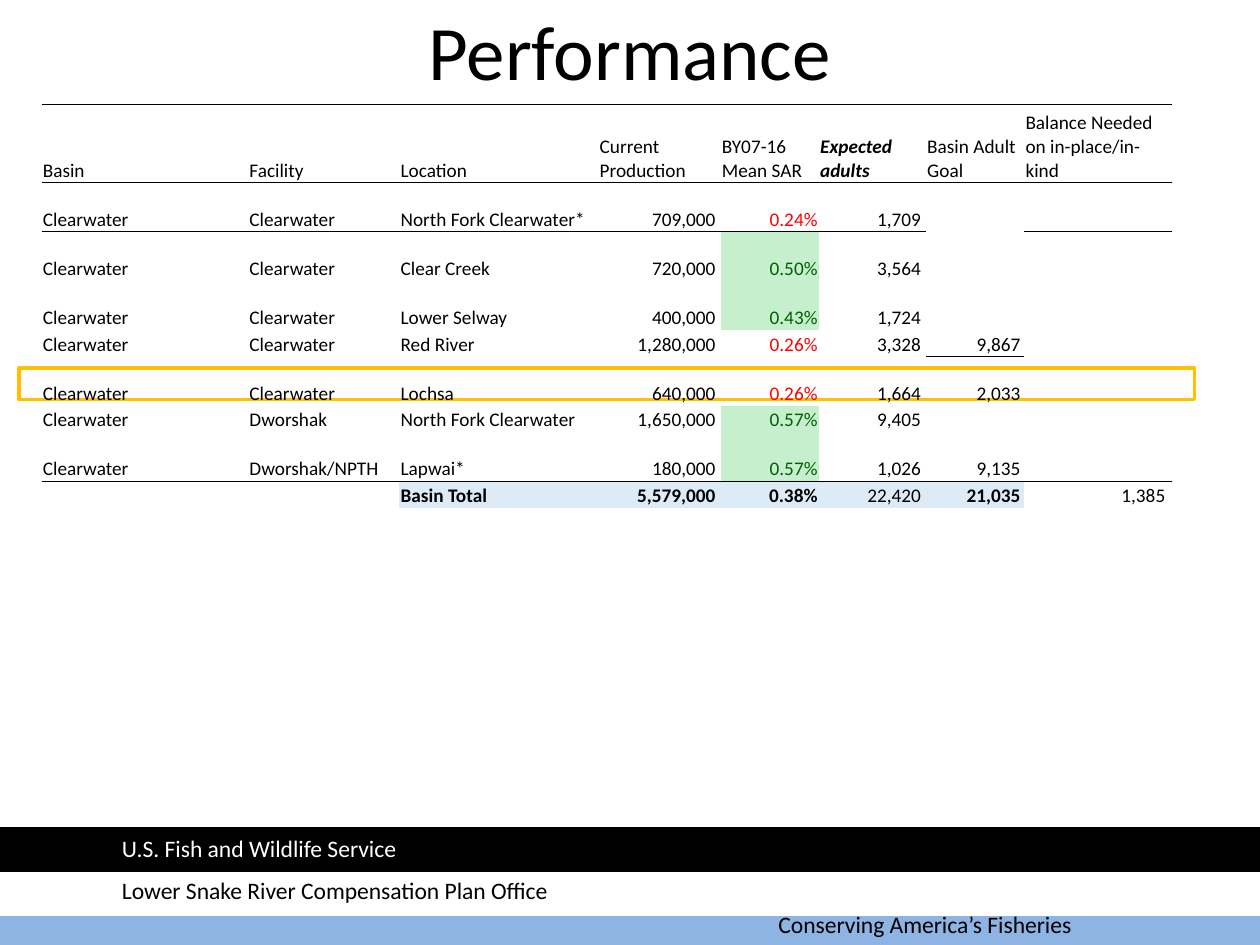
from dataclasses import dataclass
from typing import NamedTuple

from lxml.etree import SubElement
from pptx import Presentation
from pptx.dml.color import RGBColor
from pptx.enum.shapes import MSO_SHAPE as Shape
from pptx.enum.text import MSO_ANCHOR as Anchor, PP_ALIGN as Align
from pptx.oxml.ns import qn
from pptx.util import Inches, Pt


@dataclass(frozen=True)
class Theme:
    font: str = "Calibri"
    title_size: float = 44
    footer_size: float = 13.5
    table_size: float = 11
    black: str = "000000"
    white: str = "FFFFFF"
    blue: str = "8EB4E3"
    gold: str = "FFC000"
    low: str = "FF0000"
    high: str = "006100"
    high_fill: str = "C6EFCE"
    total_fill: str = "DDEBF7"


class Box(NamedTuple):
    left: float
    top: float
    width: float
    height: float


class Column(NamedTuple):
    heading: str
    width: float
    align: Align = Align.LEFT
    right_inset: float = 0.01


class Release(NamedTuple):
    facility: str
    location: str
    production: str
    survival: str
    meets_target: bool
    adults: str
    goal: str
    height: float


class Footer(NamedTuple):
    text: str
    place: Box
    color: str


THEME = Theme()
TALL, SHORT, HEADER = 0.39, 0.21, 0.62
NO_STYLE = "{2D5ABB26-0587-4C30-8999-92F81FD0307C}"
SURVIVAL = 4

COLUMNS = [
    Column("Basin", 1.64),
    Column("Facility", 1.2),
    Column("Location", 1.58),
    Column("Current Production", 0.97, Align.RIGHT, 0.04),
    Column("BY07-16 Mean SAR", 0.78, Align.RIGHT),
    Column("Expected adults", 0.85, Align.RIGHT, 0.04),
    Column("Basin Adult Goal", 0.78, Align.RIGHT, 0.03),
    Column("Balance Needed on in-place/in-kind", 1.17, Align.RIGHT, 0.05),
]
ADULTS, GOAL = 5, 6

RELEASES = [
    Release("Clearwater", "North Fork Clearwater*", "709,000", "0.24%", False, "1,709", "9,867", TALL),
    Release("Clearwater", "Clear Creek", "720,000", "0.50%", True, "3,564", "", TALL),
    Release("Clearwater", "Lower Selway", "400,000", "0.43%", True, "1,724", "", TALL),
    Release("Clearwater", "Red River", "1,280,000", "0.26%", False, "3,328", "", SHORT),
    Release("Clearwater", "Lochsa", "640,000", "0.26%", False, "1,664", "2,033", TALL),
    Release("Dworshak", "North Fork Clearwater", "1,650,000", "0.57%", True, "9,405", "9,135", SHORT),
    Release("Dworshak/NPTH", "Lapwai*", "180,000", "0.57%", True, "1,026", "", TALL),
]
TOTALS = ["", "", "Basin Total", "5,579,000", "0.38%", "22,420", "21,035", "1,385"]
GOAL_SPANS = [(1, 4), (6, 7)]  # first and last row sharing one adult goal

BANDS = [
    (Box(-0.01, 7.17, 10, 0.33), THEME.blue),
    (Box(0, 6.93, 10, 0.33), THEME.white),
    (Box(0, 6.58, 10, 0.33), THEME.black),
]
FOOTERS = [
    Footer("Conserving America’s Fisheries", Box(6.08, 7.17, 3.67, 0.33), THEME.black),
    Footer("U.S. Fish and Wildlife Service", Box(0.87, 6.57, 4.16, 0.33), THEME.white),
    Footer("Lower Snake River Compensation Plan Office", Box(0.87, 6.9, 4.97, 0.33), THEME.black),
]


def rgb(color: str) -> RGBColor:
    return RGBColor.from_string(color)


def style(paragraph, size: float, color: str, bold: bool = False, italic: bool = False) -> None:
    font = paragraph.font
    font.name, font.size = THEME.font, Pt(size)
    font.bold, font.italic = bold, italic
    font.color.rgb = rgb(color)
    for run in paragraph.runs:
        run.font.name, run.font.size = THEME.font, Pt(size)
        run.font.bold, run.font.italic = bold, italic
        run.font.color.rgb = rgb(color)


def add_rectangle(slide, place: Box, line: str, fill: str | None = None) -> None:
    rectangle = slide.shapes.add_shape(Shape.RECTANGLE, *map(Inches, place))
    rectangle.shadow.inherit = False
    if fill:
        rectangle.fill.solid()
        rectangle.fill.fore_color.rgb = rgb(fill)
    else:
        rectangle.fill.background()
    rectangle.line.color.rgb = rgb(line)
    rectangle.line.width = Pt(2)


def add_label(slide, text: str, place: Box, size: float, color: str,
              align: Align = Align.LEFT, anchor: Anchor = Anchor.TOP) -> None:
    frame = slide.shapes.add_textbox(*map(Inches, place)).text_frame
    frame.word_wrap = True
    frame.vertical_anchor = anchor
    frame.text = text
    frame.paragraphs[0].alignment = align
    style(frame.paragraphs[0], size, color)


def add_border(cell, side: str) -> None:
    """Rule one side of a cell; call before the cell gets its fill."""
    line = SubElement(cell._tc.get_or_add_tcPr(), qn(f"a:{side}"), w=str(Pt(0.5)))
    fill = SubElement(line, qn("a:solidFill"))
    SubElement(fill, qn("a:srgbClr"), val=THEME.black)


def fill_cell(cell, text: str, align: Align, right_inset: float, color: str = THEME.black,
              fill: str | None = None, bold: bool = False, italic: bool = False) -> None:
    cell.margin_left = cell.margin_top = Inches(0.01)
    cell.margin_right, cell.margin_bottom = Inches(right_inset), Inches(0)
    cell.vertical_anchor = Anchor.BOTTOM
    cell.text = text
    cell.text_frame.paragraphs[0].alignment = align
    style(cell.text_frame.paragraphs[0], THEME.table_size, color, bold, italic)
    if fill:
        cell.fill.solid()
        cell.fill.fore_color.rgb = rgb(fill)
    else:
        cell.fill.background()


def add_performance_table(slide) -> None:
    heights = [HEADER, *(release.height for release in RELEASES), SHORT]
    total_row = len(heights) - 1
    place = Box(0.33, 0.83, sum(column.width for column in COLUMNS), sum(heights))
    graphic = slide.shapes.add_table(len(heights), len(COLUMNS), *map(Inches, place))
    table = graphic.table
    table.first_row = table.horz_banding = False
    table._tbl.tblPr.find(qn("a:tableStyleId")).text = NO_STYLE
    for row, height in zip(table.rows, heights):
        row.height = Inches(height)

    for index, column in enumerate(COLUMNS):
        table.columns[index].width = Inches(column.width)
        # Rules above and below the headings and above the totals
        for row, side in [(0, "lnT"), (0, "lnB"), (1, "lnT"), (total_row - 1, "lnB"), (total_row, "lnT")]:
            add_border(table.cell(row, index), side)

        # Headings
        emphasis = index == ADULTS
        fill_cell(table.cell(0, index), column.heading, Align.LEFT, 0.01, bold=emphasis, italic=emphasis)

        # Releases
        for row, release in enumerate(RELEASES, 1):
            values = ["Clearwater", release.facility, release.location, release.production,
                      release.survival, release.adults, release.goal, ""]
            color, fill = THEME.black, None
            if index == SURVIVAL:
                color = THEME.high if release.meets_target else THEME.low
                fill = THEME.high_fill if release.meets_target else None
            fill_cell(table.cell(row, index), values[index], column.align, column.right_inset, color, fill)

        # Totals
        fill_cell(table.cell(total_row, index), TOTALS[index], column.align, column.right_inset,
                  fill=THEME.total_fill if 2 <= index <= GOAL else None,
                  bold=index in (2, 3, SURVIVAL, GOAL))

    for first, last in GOAL_SPANS:
        table.cell(first, GOAL).merge(table.cell(last, GOAL))


def main() -> None:
    deck = Presentation()
    deck.slide_width, deck.slide_height = Inches(10), Inches(7.5)
    slide = deck.slides.add_slide(deck.slide_layouts[6])

    # Footer bands and their labels
    for place, color in BANDS:
        add_rectangle(slide, place, color, color)
    for footer in FOOTERS:
        add_label(slide, footer.text, footer.place, THEME.footer_size, footer.color)

    # Title, highlight frame and table
    add_label(slide, "Performance", Box(0.5, 0.17, 9, 0.45), THEME.title_size, THEME.black,
              Align.CENTER, Anchor.MIDDLE)
    add_rectangle(slide, Box(0.15, 2.92, 9.33, 0.25), THEME.gold)
    add_performance_table(slide)
    deck.save("out.pptx")


if __name__ == "__main__":
    main()
